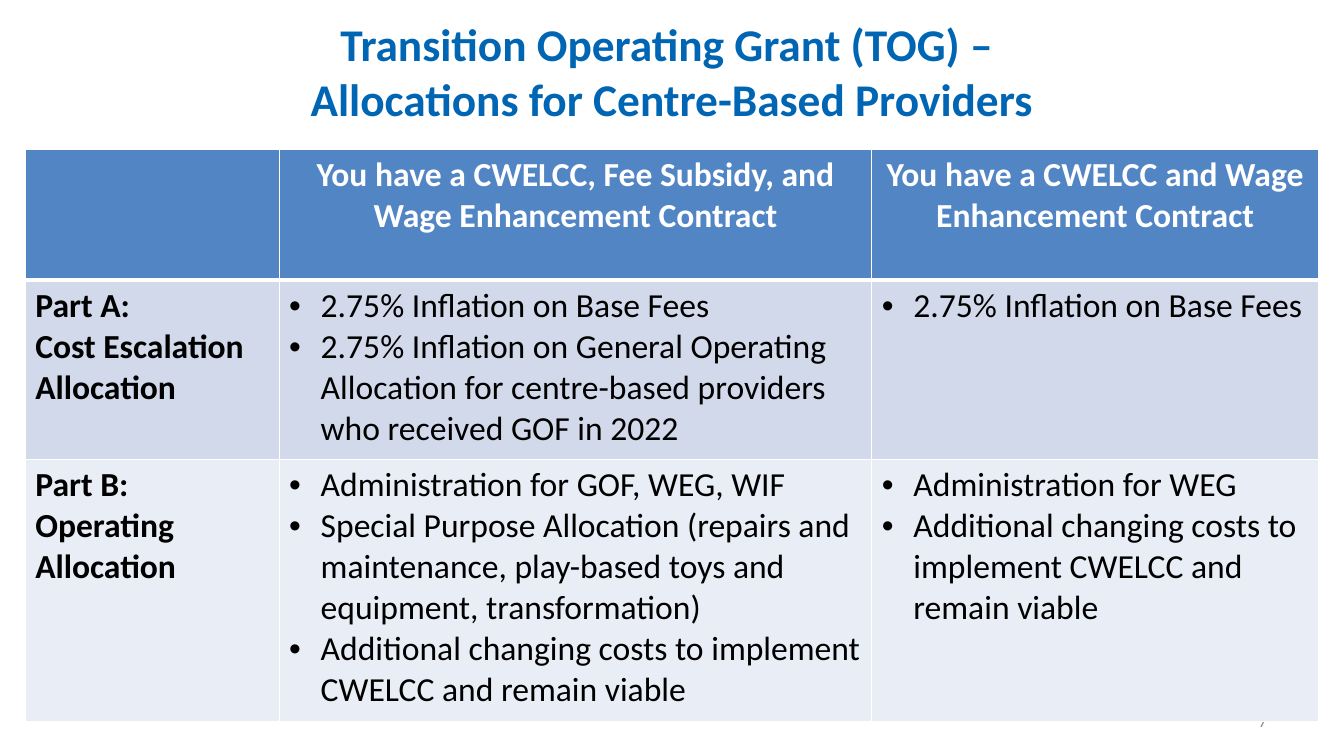
"""Builds the slide on Transition Operating Grant allocations for centre-based providers."""
from lxml.etree import SubElement
from pptx import Presentation
from pptx.dml.color import RGBColor
from pptx.enum.text import MSO_ANCHOR as Anchor, PP_ALIGN as Align
from pptx.oxml.ns import qn
from pptx.util import Pt

BLUE, GREY, WHITE, BLACK = "0066B3", "8C8C8C", "FFFFFF", "000000"
ROW_FILLS = ["5285C4", "D1D9EA", "E9EDF5"]
COLUMN_WIDTHS = [181.4, 423.4, 319]
ROW_HEIGHTS = [93.6, 128.2, 187.2]
CHANGING_COSTS = "Additional changing costs to implement CWELCC and remain viable"
BASE_FEES = "2.75% Inflation on Base Fees"
ALLOCATIONS = [
    [
        [],
        ["You have a CWELCC, Fee Subsidy, and Wage Enhancement Contract"],
        ["You have a CWELCC and Wage Enhancement Contract"],
    ],
    [
        ["Part A:", "Cost Escalation Allocation"],
        [
            BASE_FEES,
            "2.75% Inflation on General Operating Allocation for centre-based "
            "providers who received GOF in 2022",
        ],
        [BASE_FEES],
    ],
    [
        ["Part B: Operating Allocation"],
        [
            "Administration for GOF, WEG, WIF",
            "Special Purpose Allocation (repairs and maintenance, play-based "
            "toys and equipment, transformation)",
            CHANGING_COSTS,
        ],
        ["Administration for WEG", CHANGING_COSTS],
    ],
]


def color(code):
    return RGBColor.from_string(code)


class SlideBuilder:
    def __init__(self, slide, font_name):
        self.slide = slide
        self.font_name = font_name

    def fill_text(self, frame, lines, size, code, bold=False, align=Align.LEFT, bullets=False):
        for index, line in enumerate(lines):
            para = frame.add_paragraph() if index else frame.paragraphs[0]
            para.text = line
            para.alignment = align
            if bullets:
                self.bullet(para)
            for span in para.runs:
                span.font.name = self.font_name
                span.font.size = Pt(size)
                span.font.bold = bold
                span.font.color.rgb = color(code)

    def bullet(self, para):
        properties = para._p.get_or_add_pPr()
        properties.set("marL", str(Pt(22.5)))
        properties.set("indent", str(Pt(-22.5)))
        SubElement(properties, qn("a:buFont"), typeface="Arial")
        SubElement(properties, qn("a:buChar"), char="•")

    def text(self, left, top, width, height, words, size, code, bold, align):
        box = self.slide.shapes.add_textbox(Pt(left), Pt(top), Pt(width), Pt(height))
        frame = box.text_frame
        frame.word_wrap = True
        frame.vertical_anchor = Anchor.MIDDLE
        self.fill_text(frame, [words], size, code, bold, align)

    def border(self, cell, side, width):
        line = SubElement(cell._tc.get_or_add_tcPr(), qn(f"a:{side}"), w=str(Pt(width)))
        fill = SubElement(line, qn("a:solidFill"))
        SubElement(fill, qn("a:srgbClr"), val=WHITE)

    def table(self, left, top, widths, heights, fills, content):
        table = self.slide.shapes.add_table(
            len(heights), len(widths), Pt(left), Pt(top), Pt(sum(widths)), Pt(sum(heights))
        ).table
        for column, width in zip(table.columns, widths):
            column.width = Pt(width)
        for row_index, (row, height) in enumerate(zip(table.rows, heights)):
            row.height = Pt(height)
            header = row_index == 0
            for column_index, cell in enumerate(row.cells):
                label = column_index == 0
                for side in ("lnL", "lnR", "lnT", "lnB"):
                    joins_header = (row_index, side) in ((0, "lnB"), (1, "lnT"))
                    self.border(cell, side, 3 if joins_header else 1)
                cell.fill.solid()
                cell.fill.fore_color.rgb = color(fills[row_index])
                self.fill_text(
                    cell.text_frame,
                    content[row_index][column_index],
                    24,
                    WHITE if header else BLACK,
                    bold=header or label,
                    align=Align.CENTER if header else Align.LEFT,
                    bullets=not (header or label),
                )


def main():
    deck = Presentation()
    deck.slide_width, deck.slide_height = Pt(960), Pt(540)
    page = SlideBuilder(deck.slides.add_slide(deck.slide_layouts[6]), "Calibri")
    page.text(
        18, 21.6, 923.8, 58.3,
        "Transition Operating Grant (TOG) – \nAllocations for Centre-Based Providers",
        32.4, BLUE, True, Align.CENTER,
    )
    page.text(688.3, 500.4, 223.9, 28.8, "7", 12, GREY, False, Align.RIGHT)
    page.table(18, 106.6, COLUMN_WIDTHS, ROW_HEIGHTS, ROW_FILLS, ALLOCATIONS)
    deck.save("out.pptx")


if __name__ == "__main__":
    main()
